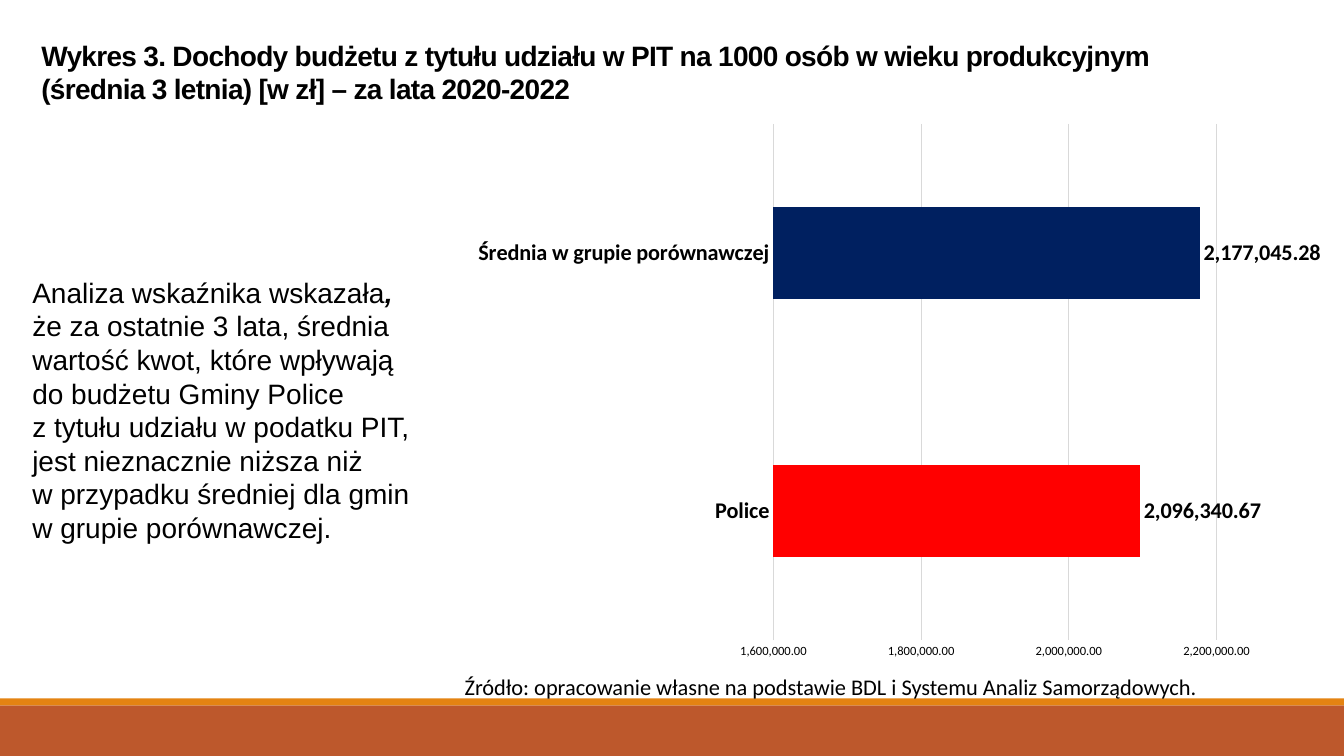
from dataclasses import dataclass

from lxml.etree import SubElement
from pptx import Presentation
from pptx.chart.data import CategoryChartData
from pptx.dml.color import RGBColor
from pptx.enum.chart import XL_CHART_TYPE, XL_LABEL_POSITION, XL_TICK_MARK
from pptx.enum.shapes import MSO_SHAPE
from pptx.enum.text import MSO_ANCHOR, MSO_AUTO_SIZE, PP_ALIGN
from pptx.oxml import parse_xml
from pptx.oxml.ns import nsdecls, qn
from pptx.util import Inches, Pt


@dataclass(frozen=True)
class Theme:
    ink: str = "000000"
    rust: str = "BD582C"
    amber: str = "E48312"
    grid: str = "D9D9D9"
    red: str = "FF0000"
    navy: str = "002060"
    head: str = "Arial"
    plain: str = "Calibri"
    large: int = 20
    mid: int = 16
    small: int = 9


@dataclass(frozen=True)
class Box:
    left: float
    top: float
    width: float
    height: float

    def crop(self, left, top, width, height):
        return Box(self.left + left * self.width, self.top + top * self.height,
                   width * self.width, height * self.height)

    def frame(self):
        return [Inches(n) for n in (self.left, self.top, self.width, self.height)]


THEME = Theme()
PAGE = Box(0, 0, 13.33, 7.5)
FORMAT = "#,##0.00"


def color(code):
    return RGBColor.from_string(code)


def style(font, face, size, bold=False):
    font.name = face
    font.size = Pt(size)
    font.bold = bold
    font.color.rgb = color(THEME.ink)


def move(shape, box):
    shape.left, shape.top, shape.width, shape.height = box.frame()


def setup(frame, anchor, wrap=True):
    frame.auto_size = MSO_AUTO_SIZE.NONE
    frame.vertical_anchor = anchor
    frame.word_wrap = wrap


def add_band(slide, box):
    for top, share, fill in ((0.12, 0.88, THEME.rust), (0, 0.12, THEME.amber)):
        bar = slide.shapes.add_shape(MSO_SHAPE.RECTANGLE, *box.crop(0, top, 1, share).frame())
        bar.shadow.inherit = False
        bar.fill.solid()
        bar.fill.fore_color.rgb = color(fill)
        bar.line.fill.background()


def add_title(slide, box):
    title = slide.shapes.title
    move(title, box)
    frame = title.text_frame
    setup(frame, MSO_ANCHOR.TOP)
    frame.text = ("Wykres 3. Dochody budżetu z tytułu udziału w PIT na 1000 osób "
                  "w wieku produkcyjnym (średnia 3 letnia) [w zł] – za lata 2020-2022")
    para = frame.paragraphs[0]
    para.alignment = PP_ALIGN.LEFT
    style(para.font, THEME.head, THEME.large, True)
    para.runs[0]._r.get_or_add_rPr().set("spc", "-50")


def add_body(slide, box):
    body = slide.placeholders[1]
    move(body, box)
    frame = body.text_frame
    setup(frame, MSO_ANCHOR.TOP)
    para = frame.paragraphs[0]
    style(para.font, THEME.head, THEME.large)
    para.space_before = Pt(0)
    props = para._p.get_or_add_pPr()
    props.set("marL", "0")
    props.set("indent", "0")
    props.insert_element_before(parse_xml(f"<a:buNone {nsdecls('a')}/>"), "a:tabLst", "a:defRPr")
    para.add_run().text = "Analiza wskaźnika wskazała"
    comma = para.add_run()
    comma.text = ","
    comma.font.bold = comma.font.italic = True
    for line in ("że za ostatnie 3 lata, średnia wartość kwot, które wpływają",
                 "do budżetu Gminy Police",
                 "z tytułu udziału w podatku PIT, jest nieznacznie niższa niż",
                 "w przypadku średniej dla gmin",
                 "w grupie porównawczej."):
        para.add_line_break()
        para.add_run().text = line


def add_source(slide, box):
    frame = slide.shapes.add_textbox(*box.frame()).text_frame
    setup(frame, MSO_ANCHOR.MIDDLE, False)
    frame.text = "Źródło: opracowanie własne na podstawie BDL i Systemu Analiz Samorządowych."
    style(frame.paragraphs[0].font, THEME.plain, THEME.mid)


def set_plot(chart, area):
    plot = chart._chartSpace.chart.plotArea
    for old in plot.findall(qn("c:layout")):
        plot.remove(old)
    layout = parse_xml(f"<c:layout {nsdecls('c')}/>")
    plot.insert(0, layout)
    manual = SubElement(layout, qn("c:manualLayout"))
    for tag, val in (("layoutTarget", "inner"), ("xMode", "edge"), ("yMode", "edge"),
                     ("x", area.left), ("y", area.top), ("w", area.width), ("h", area.height)):
        SubElement(manual, qn(f"c:{tag}")).set("val", str(val))


def add_bars(slide, box):
    data = CategoryChartData(number_format=FORMAT)
    data.categories = ["Police", "Średnia w grupie porównawczej"]
    data.add_series("Series 1", (2096340.67, 2177045.28))
    chart = slide.shapes.add_chart(XL_CHART_TYPE.BAR_CLUSTERED, *box.frame(), data).chart
    chart.has_legend = chart.has_title = False
    style(chart.font, THEME.plain, THEME.small)
    set_plot(chart, Box(0.37, 0.02, 0.6, 0.93))

    names, scale = chart.category_axis, chart.value_axis
    for axis, size, bold in ((names, THEME.mid, True), (scale, THEME.small, False)):
        axis.major_tick_mark = axis.minor_tick_mark = XL_TICK_MARK.NONE
        style(axis.tick_labels.font, THEME.plain, size, bold)
    scale.minimum_scale, scale.maximum_scale, scale.major_unit = 1600000, 2300000, 200000
    scale.tick_labels.number_format = FORMAT
    scale.tick_labels.number_format_is_linked = False
    scale.format.line.fill.background()
    for line in (names.format.line, scale.major_gridlines.format.line):
        line.color.rgb = color(THEME.grid)
        line.width = Pt(0.75)

    plot = chart.plots[0]
    plot.gap_width = 182
    plot.vary_by_categories = False
    bars = plot.series[0]
    bars.invert_if_negative = False
    for item, fill in ((bars, THEME.red), (bars.points[1], THEME.navy)):
        item.format.fill.solid()
        item.format.fill.fore_color.rgb = color(fill)
    tags = bars.data_labels
    tags.show_value = True
    tags.number_format = FORMAT
    tags.number_format_is_linked = False
    tags.position = XL_LABEL_POSITION.OUTSIDE_END
    style(tags.font, THEME.plain, THEME.mid, True)


def main():
    deck = Presentation()
    deck.slide_width, deck.slide_height = Inches(PAGE.width), Inches(PAGE.height)
    slide = deck.slides.add_slide(deck.slide_layouts[1])
    add_band(slide, Box(0, 6.93, PAGE.width, 0.57))
    add_title(slide, Box(0.31, 0.33, 12.09, 0.8))
    add_body(slide, Box(0.22, 2.68, 4.38, 2.79))
    add_source(slide, Box(4.51, 6.63, 7.56, 0.37))
    add_bars(slide, Box(4.51, 1.12, 8.6, 5.51))
    deck.save("out.pptx")


if __name__ == "__main__":
    main()
